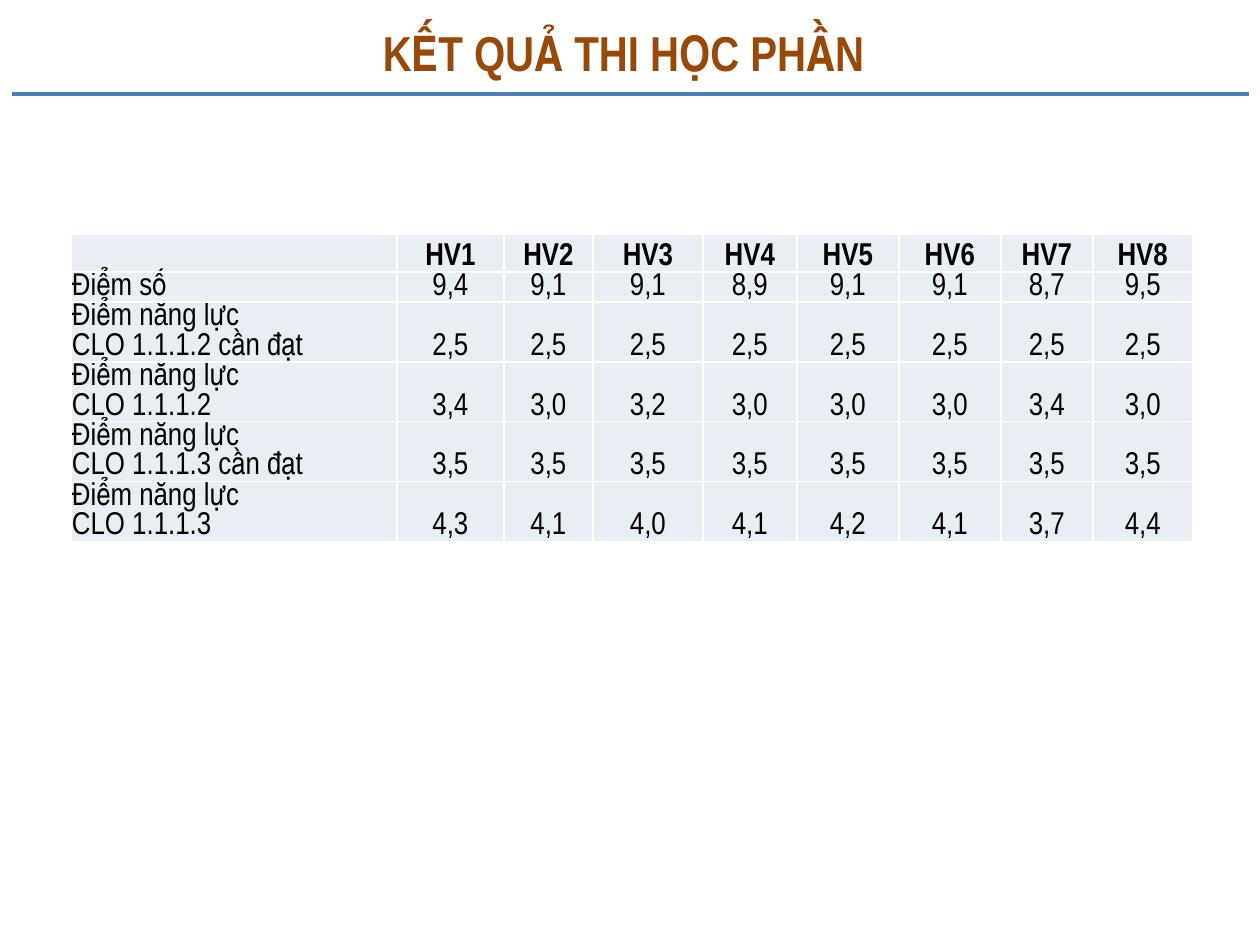
from dataclasses import dataclass

from pptx import Presentation
from pptx.dml.color import RGBColor as RGB
from pptx.enum.shapes import MSO_CONNECTOR as Connector
from pptx.enum.text import MSO_ANCHOR as Anchor, PP_ALIGN as Align
from pptx.oxml import parse_xml
from pptx.oxml.ns import nsdecls
from pptx.util import Pt

EMU_PER_PX = 914400 / 126


def px(length):
    return round(length * EMU_PER_PX)


@dataclass(frozen=True)
class Theme:
    font: str = "Arial Narrow"
    title: str = "984807"
    rule: str = "4B7EBC"
    text: str = "000000"
    cell: str = "E9EDF4"
    border: str = "FFFFFF"
    title_size: int = 28
    table_size: int = 18
    table_leading: float = 17.1


class SlideBuilder:
    def __init__(self, slide, theme):
        self.slide = slide
        self.theme = theme

    def style(self, frame, size, color, bold, align):
        for paragraph in frame.paragraphs:
            paragraph.alignment = align
            for run in paragraph.runs:
                run.font.name = self.theme.font
                run.font.size = Pt(size)
                run.font.bold = bold
                run.font.color.rgb = RGB.from_string(color)

    def title(self, text, left, top, width, height):
        heading = self.slide.shapes.add_textbox(*map(px, (left, top, width, height)))
        frame = heading.text_frame
        frame.word_wrap = True
        frame.vertical_anchor = Anchor.MIDDLE
        frame.text = text
        self.style(frame, self.theme.title_size, self.theme.title, True, Align.CENTER)

    def rule(self, left, right, y):
        rule = self.slide.shapes.add_connector(
            Connector.STRAIGHT, px(left), px(y), px(right), px(y))
        rule.line.color.rgb = RGB.from_string(self.theme.rule)
        rule.line.width = Pt(2)
        rule._element.spPr.append(parse_xml(f"<a:effectLst {nsdecls('a')}/>"))

    def table(self, rows, left, top, widths, heights):
        frame = self.slide.shapes.add_table(
            len(rows), len(widths), px(left), px(top), px(sum(widths)), px(sum(heights)))
        table = frame.table
        table.first_row = table.horz_banding = False
        for column, width in zip(table.columns, widths):
            column.width = px(width)
        for row, height in zip(table.rows, heights):
            row.height = px(height)
        for r, values in enumerate(rows):
            for c, value in enumerate(values):
                self.cell(table.cell(r, c), value, bold=r == 0,
                          align=Align.LEFT if c == 0 else Align.CENTER)

    def cell(self, cell, text, bold, align):
        theme = self.theme
        cell.margin_left = cell.margin_right = px(1)
        cell.margin_top = cell.margin_bottom = 0
        cell.vertical_anchor = Anchor.BOTTOM
        self.borders(cell)
        cell.fill.solid()
        cell.fill.fore_color.rgb = RGB.from_string(theme.cell)
        cell.text_frame.text = text
        self.style(cell.text_frame, theme.table_size, theme.text, bold, align)
        for paragraph in cell.text_frame.paragraphs:
            paragraph.line_spacing = Pt(theme.table_leading)
            self.end_style(paragraph)

    def borders(self, cell):
        properties = cell._tc.get_or_add_tcPr()
        for side in ("lnL", "lnR", "lnT", "lnB"):
            properties.append(parse_xml(
                f'<a:{side} {nsdecls("a")} w="{Pt(1)}"><a:solidFill>'
                f'<a:srgbClr val="{self.theme.border}"/></a:solidFill></a:{side}>'))

    def end_style(self, paragraph):
        """Give the paragraph mark the table font, so it does not stretch the row."""
        paragraph._p.append(parse_xml(
            f'<a:endParaRPr {nsdecls("a")} sz="{self.theme.table_size * 100}">'
            f'<a:latin typeface="{self.theme.font}"/></a:endParaRPr>'))


RESULTS = [
    ("", *(f"HV{number}" for number in range(1, 9))),
    ("Điểm số", "9,4", "9,1", "9,1", "8,9", "9,1", "9,1", "8,7", "9,5"),
    ("Điểm năng lực\nCLO 1.1.1.2 cần đạt", *["2,5"] * 8),
    ("Điểm năng lực\nCLO 1.1.1.2", "3,4", "3,0", "3,2", "3,0", "3,0", "3,0", "3,4", "3,0"),
    ("Điểm năng lực\nCLO 1.1.1.3 cần đạt", *["3,5"] * 8),
    ("Điểm năng lực\nCLO 1.1.1.3", "4,3", "4,1", "4,0", "4,1", "4,2", "4,1", "3,7", "4,4"),
]
COLUMN_WIDTHS = [326, 107, 89, 110, 94, 102, 102, 92, 100]
LINE_HEIGHT = 30


def main():
    deck = Presentation()
    deck.slide_width, deck.slide_height = px(1260), px(945)
    builder = SlideBuilder(deck.slides.add_slide(deck.slide_layouts[6]), Theme())
    builder.rule(12, 1249, 94)
    builder.title("KẾT QUẢ THI HỌC PHẦN", 14, 10, 1219, 84)
    row_heights = [LINE_HEIGHT * (1 + row[0].count("\n")) for row in RESULTS]
    builder.table(RESULTS, 71, 234, COLUMN_WIDTHS, row_heights)
    deck.save("out.pptx")


if __name__ == "__main__":
    main()
